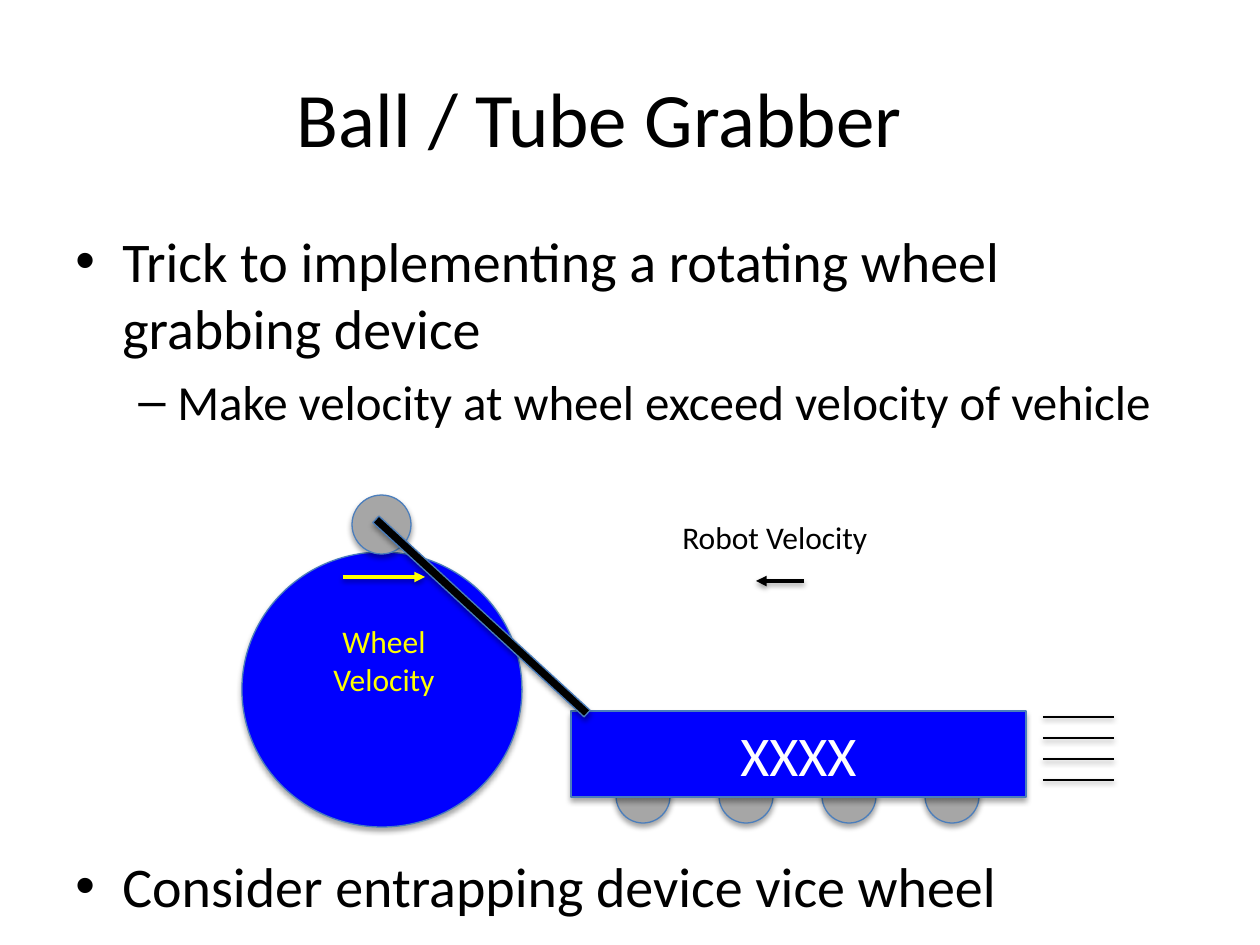
from dataclasses import dataclass

from lxml.etree import SubElement
from pptx import Presentation
from pptx.dml.color import RGBColor
from pptx.enum.shapes import MSO_CONNECTOR as Connector
from pptx.enum.shapes import MSO_SHAPE as Preset
from pptx.enum.text import MSO_ANCHOR as Anchor
from pptx.enum.text import PP_ALIGN as Align
from pptx.oxml.ns import qn
from pptx.util import Emu, Pt

PX_PER_INCH = 126


@dataclass(frozen=True)
class Theme:
    font: str = "Calibri"
    bullet_font: str = "Arial"
    black: str = "000000"
    white: str = "FFFFFF"
    yellow: str = "FFFF00"
    blue: str = "0000FF"
    gray: str = "A6A6A6"
    outline: str = "4B7EBC"
    title_size: int = 44
    body_size: int = 32
    sub_size: int = 28
    label_size: int = 18


THEME = Theme()


@dataclass(frozen=True)
class Box:
    left: int
    top: int
    width: int
    height: int


@dataclass(frozen=True)
class Part:
    preset: Preset
    box: Box
    fill: str
    rotation: float = 0
    text: str = ""


@dataclass(frozen=True)
class Stroke:
    start: int
    end: int
    y: int
    color: str = THEME.black
    width: int = 1
    arrow: bool = False


@dataclass(frozen=True)
class Label:
    box: Box
    lines: tuple[str, ...]
    size: int
    color: str = THEME.black
    align: Align = Align.CENTER
    anchor: Anchor = Anchor.TOP
    wrap: bool = False


@dataclass(frozen=True)
class Bullet:
    text: str
    char: str
    size: int
    margin: int
    hang: int
    space_before: int


CART_WHEELS = [Part(Preset.OVAL, Box(616 + 103 * i, 769, 54, 54), THEME.gray) for i in range(4)]
MACHINE = [
    Part(Preset.RECTANGLE, Box(571, 711, 455, 86), THEME.blue, text="XXXX"),
    Part(Preset.OVAL, Box(242, 552, 280, 275), THEME.blue),
    Part(Preset.OVAL, Box(352, 495, 59, 59), THEME.gray),
    Part(Preset.RECTANGLE, Box(338, 612, 287, 9), THEME.black, rotation=42.6),
]
VELOCITY_ARROWS = [
    Stroke(343, 425, 577, THEME.yellow, 2, True),
    Stroke(804, 756, 581, THEME.black, 2, True),
]
SPEED_LINES = [Stroke(1043, 1114, 717 + 21 * i) for i in range(4)]
TITLE = Label(Box(241, 38, 717, 158), ("Ball / Tube Grabber",), THEME.title_size,
              anchor=Anchor.MIDDLE, wrap=True)
VELOCITY_LABELS = [
    Label(Box(670, 512, 214, 50), ("Robot Velocity",), THEME.label_size, align=Align.LEFT),
    Label(Box(319, 616, 130, 89), ("Wheel", "Velocity"), THEME.label_size, THEME.yellow),
]
BODY_BOX = Box(63, 220, 1134, 725)
BULLETS = [
    Bullet("Trick to implementing a rotating wheel grabbing device", "•", THEME.body_size, 47, 47, 0),
    Bullet("Make velocity at wheel exceed velocity of vehicle", "–", THEME.sub_size, 102, 39, 6),
    Bullet("Consider entrapping device vice wheel", "•", THEME.body_size, 47, 47, 241),
]


def px(value: int) -> Emu:
    return Emu(round(value * 914400 / PX_PER_INCH))


def place(box: Box) -> tuple[Emu, ...]:
    return px(box.left), px(box.top), px(box.width), px(box.height)


def set_font(paragraph, size: int, color: str) -> None:
    paragraph.font.name = THEME.font
    paragraph.font.size = Pt(size)
    paragraph.font.color.rgb = RGBColor.from_string(color)


def add_shadow(shape, distance: float, opacity: int) -> None:
    properties = shape.element.spPr
    effects = properties.find(qn("a:effectLst"))
    if effects is None:
        effects = SubElement(properties, qn("a:effectLst"))
    shadow = SubElement(effects, qn("a:outerShdw"), blurRad=str(Pt(3.1)),
                        dist=str(Pt(distance)), dir="5400000", rotWithShape="0")
    color = SubElement(shadow, qn("a:srgbClr"), val=THEME.black)
    SubElement(color, qn("a:alpha"), val=str(opacity * 1000))


def add_part(slide, part: Part) -> None:
    shape = slide.shapes.add_shape(part.preset, *place(part.box))
    shape.rotation = part.rotation
    shape.fill.solid()
    shape.fill.fore_color.rgb = RGBColor.from_string(part.fill)
    shape.line.color.rgb = RGBColor.from_string(THEME.outline)
    shape.line.width = Pt(0.75)
    shape.shadow.inherit = False
    add_shadow(shape, 1.8, 35)
    if part.text:
        shape.text_frame.vertical_anchor = Anchor.MIDDLE
        paragraph = shape.text_frame.paragraphs[0]
        paragraph.text = part.text
        paragraph.alignment = Align.CENTER
        set_font(paragraph, THEME.body_size, THEME.white)


def add_stroke(slide, stroke: Stroke) -> None:
    connector = slide.shapes.add_connector(
        Connector.STRAIGHT, px(stroke.start), px(stroke.y), px(stroke.end), px(stroke.y))
    connector.line.color.rgb = RGBColor.from_string(stroke.color)
    connector.line.width = Pt(stroke.width)
    if stroke.arrow:
        SubElement(connector.get_or_add_ln(), qn("a:tailEnd"), type="triangle")
    add_shadow(connector, 1.6, 38)


def add_label(slide, label: Label) -> None:
    frame = slide.shapes.add_textbox(*place(label.box)).text_frame
    frame.word_wrap = label.wrap
    frame.vertical_anchor = label.anchor
    for index, line in enumerate(label.lines):
        paragraph = frame.add_paragraph() if index else frame.paragraphs[0]
        paragraph.text = line
        paragraph.alignment = label.align
        set_font(paragraph, label.size, label.color)


def add_bullets(slide, box: Box, bullets: list[Bullet]) -> None:
    frame = slide.shapes.add_textbox(*place(box)).text_frame
    frame.word_wrap = True
    for index, bullet in enumerate(bullets):
        paragraph = frame.add_paragraph() if index else frame.paragraphs[0]
        paragraph.text = bullet.text
        paragraph.space_before = Pt(bullet.space_before)
        properties = paragraph._p.get_or_add_pPr()
        properties.set("marL", str(px(bullet.margin)))
        properties.set("indent", str(px(-bullet.hang)))
        SubElement(properties, qn("a:buFont"), typeface=THEME.bullet_font)
        SubElement(properties, qn("a:buChar"), char=bullet.char)
        set_font(paragraph, bullet.size, THEME.black)


def main() -> None:
    presentation = Presentation()
    presentation.slide_width, presentation.slide_height = px(1260), px(945)
    slide = presentation.slides.add_slide(presentation.slide_layouts[6])
    for wheel in CART_WHEELS:
        add_part(slide, wheel)
    add_label(slide, TITLE)
    add_bullets(slide, BODY_BOX, BULLETS)
    for part in MACHINE:
        add_part(slide, part)
    for stroke in VELOCITY_ARROWS + SPEED_LINES:
        add_stroke(slide, stroke)
    for label in VELOCITY_LABELS:
        add_label(slide, label)
    presentation.save("out.pptx")


if __name__ == "__main__":
    main()
